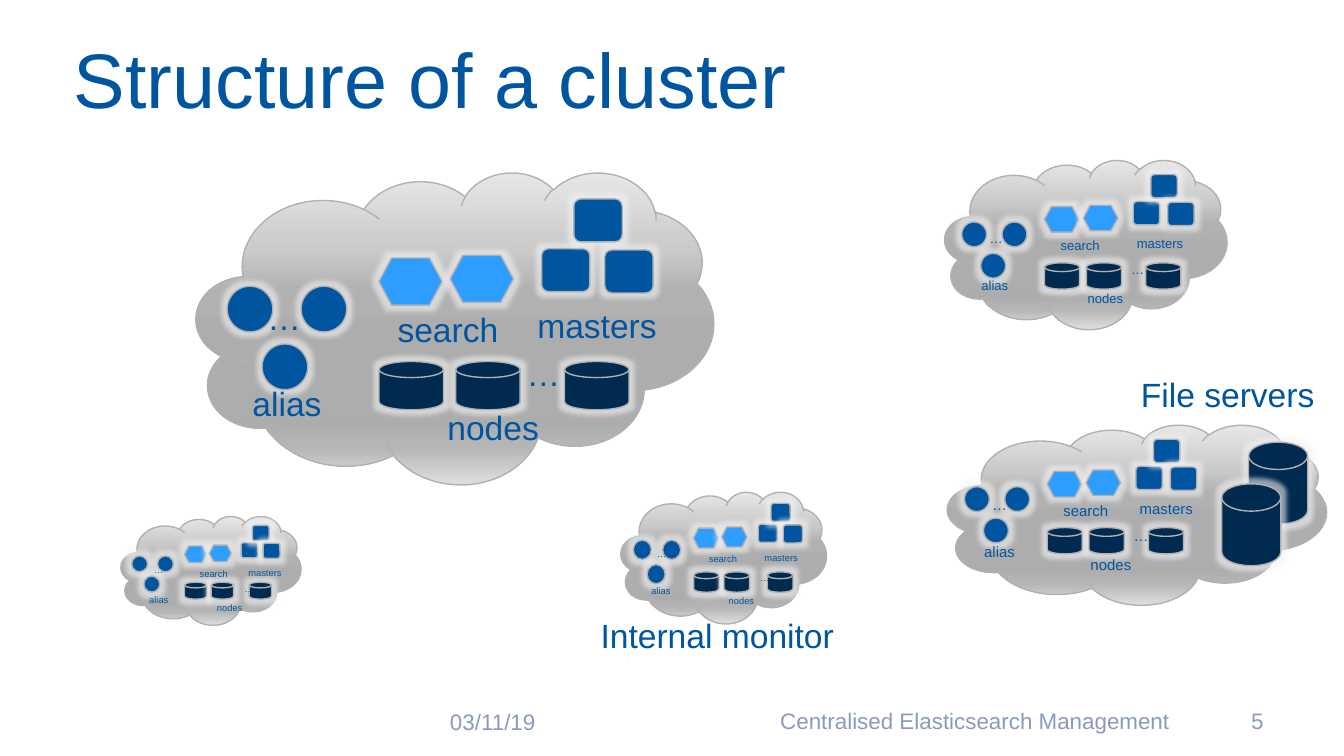
import pptx
import pptx.dml.color
import pptx.enum.shapes
import pptx.enum.text
import pptx.oxml
import pptx.oxml.ns
import pptx.util
from lxml import etree

SHAPE = pptx.enum.shapes.MSO_SHAPE
ALIGN = pptx.enum.text.PP_ALIGN
ANCHOR = pptx.enum.text.MSO_ANCHOR
AUTO = pptx.enum.text.MSO_AUTO_SIZE
qn = pptx.oxml.ns.qn
inch = pptx.util.Inches

COLORS = {"blue": "0055A0", "navy": "002A50", "sky": "2D9DFF",
          "line": "B1B1B1", "footer": "8C99BE", "glow": "F2F2F2"}
CLOUD_STOPS = [(0, "E7E7E7"), (25, "CACACA"), (38, "B1B1B1"), (55, "ADADAD"),
               (80, "ACACAC"), (88, "B5B5B5"), (100, "DDDDDD")]

# Parts of a cluster, measured on a cloud of this size
UNIT_W, UNIT_H = 3.85, 2.32
# preset, colour, width, height, positions
PARTS = [
    (SHAPE.FLOWCHART_PREPARATION, "sky", 0.47, 0.35, [(1.36, 0.64), (1.89, 0.62)]),
    (SHAPE.FLOWCHART_MAGNETIC_DISK, "navy", 0.48, 0.36,
     [(1.36, 1.41), (1.93, 1.41), (2.74, 1.41)]),
    (SHAPE.FLOWCHART_ALTERNATE_PROCESS, "blue", 0.36, 0.32,
     [(2.57, 0.57), (2.81, 0.2), (3.04, 0.58)]),
    (SHAPE.FLOWCHART_CONNECTOR, "blue", 0.34, 0.34,
     [(0.23, 0.85), (0.49, 1.28), (0.78, 0.85)]),
]
# text, its width at 18 pt, position
LABELS = [("search", 0.76, 1.4, 0.97), ("nodes", 0.69, 1.77, 1.7),
          ("…", 0.25, 2.36, 1.3), ("masters", 0.9, 2.44, 0.94),
          ("…", 0.25, 0.43, 0.88), ("alias", 0.52, 0.32, 1.52)]


def rgb(name):
    return pptx.dml.color.RGBColor.from_string(COLORS[name])


def style_font(para, size, color):
    para.font.name = "Arial"
    para.font.size = pptx.util.Pt(size)
    para.font.color.rgb = rgb(color)


def add_outlined(shapes, preset, left, top, width, height):
    shape = shapes.add_shape(preset, inch(left), inch(top), inch(width), inch(height))
    shape.shadow.inherit = False
    shape.line.color.rgb = rgb("line")
    shape.line.width = pptx.util.Pt(0.75)
    return shape


def add_cloud(shapes, left, top, width, height):
    cloud = add_outlined(shapes, SHAPE.CLOUD, left, top, width, height)
    cloud.fill.gradient()
    cloud.fill.gradient_angle = 270
    stops = next(cloud._element.spPr.iter(qn("a:gsLst")))
    for stop in list(stops):
        stops.remove(stop)
    for share, color in CLOUD_STOPS:
        stop = etree.SubElement(stops, qn("a:gs"), pos=str(share * 1000))
        etree.SubElement(stop, qn("a:srgbClr"), val=color)


def add_part(shapes, preset, color, left, top, width, height):
    part = add_outlined(shapes, preset, left, top, width, height)
    part.fill.solid()
    part.fill.fore_color.rgb = rgb(color)
    # Soft light halo
    effects = part._element.spPr.find(qn("a:effectLst"))
    glow = etree.SubElement(effects, qn("a:glow"), rad=str(pptx.util.Pt(5)))
    tint = etree.SubElement(glow, qn("a:srgbClr"), val=COLORS["glow"])
    etree.SubElement(tint, qn("a:alpha"), val="60000")


def add_label(shapes, text, text_width, left, top, size=18):
    """One unwrapped line; text_width is its width at 18 pt."""
    scale = size / 18
    box = shapes.add_textbox(inch(left), inch(top), inch(0.2 + text_width * scale),
                             inch(0.1 + 0.3 * scale))
    box.text_frame.word_wrap = False
    box.text_frame.auto_size = AUTO.SHAPE_TO_FIT_TEXT
    box.text_frame.text = text
    style_font(box.text_frame.paragraphs[0], size, "blue")


def add_cluster(page, left, top, width, height, size, cloud_size=None):
    shapes = page.shapes.add_group_shape().shapes
    scale_x, scale_y = width / UNIT_W, height / UNIT_H
    add_cloud(shapes, left, top, *(cloud_size or (width, height)))
    for preset, color, part_w, part_h, places in PARTS:
        for x, y in places:
            add_part(shapes, preset, color, left + x * scale_x, top + y * scale_y,
                     part_w * scale_x, part_h * scale_y)
    for text, text_width, x, y in LABELS:
        add_label(shapes, text, text_width, left + x * scale_x, top + y * scale_y, size)


def add_footer(page, text, left, top, width, align):
    box = page.shapes.add_textbox(inch(left), inch(top), inch(width), inch(0.3))
    box.text_frame.word_wrap = True
    box.text_frame.vertical_anchor = ANCHOR.MIDDLE
    box.text_frame.text = text
    para = box.text_frame.paragraphs[0]
    para.alignment = align
    style_font(para, 12, "footer")


def set_title(page, text):
    title = page.shapes.title
    title.left, title.top, title.width, title.height = map(inch, (0.5, 0.19, 9, 0.77))
    frame = title.text_frame
    frame.text = text
    frame.auto_size = AUTO.NONE
    frame.vertical_anchor = ANCHOR.MIDDLE
    frame.margin_left = frame.margin_right = inch(0.05)
    frame.margin_top = frame.margin_bottom = inch(0.05)
    frame.paragraphs[0].alignment = ALIGN.LEFT
    style_font(frame.paragraphs[0], 41.4, "blue")


def main():
    # Widescreen page, 16:9
    deck = pptx.Presentation()
    deck.slide_width = inch(10)
    deck.slide_height = deck.slide_width * 9 // 16
    page = deck.slides.add_slide(deck.slide_layouts[5])
    set_title(page, "Structure of a cluster")

    # File server cluster, with a wider cloud and two large disks
    add_cluster(page, 7.05, 3.16, 2.1, 1.26, 8, cloud_size=(2.82, 1.34))
    for left, top in [(9.29, 3.29), (9.09, 3.6)]:
        add_part(page.shapes, SHAPE.FLOWCHART_MAGNETIC_DISK, "navy", left, top, 0.44, 0.61)

    # Other clusters
    add_cluster(page, 1.46, 1.28, UNIT_W, UNIT_H, 18)
    add_cluster(page, 7.03, 1.19, 2.1, 1.26, 7)
    add_cluster(page, 4.62, 3.66, 1.53, 0.98, 5)
    add_cluster(page, 0.9, 3.84, 1.34, 0.81, 5)

    # Cluster names
    add_label(page.shapes, "Internal monitor", 1.76, 4.37, 4.53)
    add_label(page.shapes, "File servers", 1.31, 8.39, 2.73)

    # Footer
    add_footer(page, "03/11/19", 3.25, 5.22, 2.33, ALIGN.LEFT)
    add_footer(page, "Centralised Elasticsearch Management", 5.67, 5.21, 3.17, ALIGN.CENTER)
    add_footer(page, "5", 8.95, 5.21, 0.55, ALIGN.RIGHT)

    deck.save("out.pptx")


if __name__ == "__main__":
    main()
